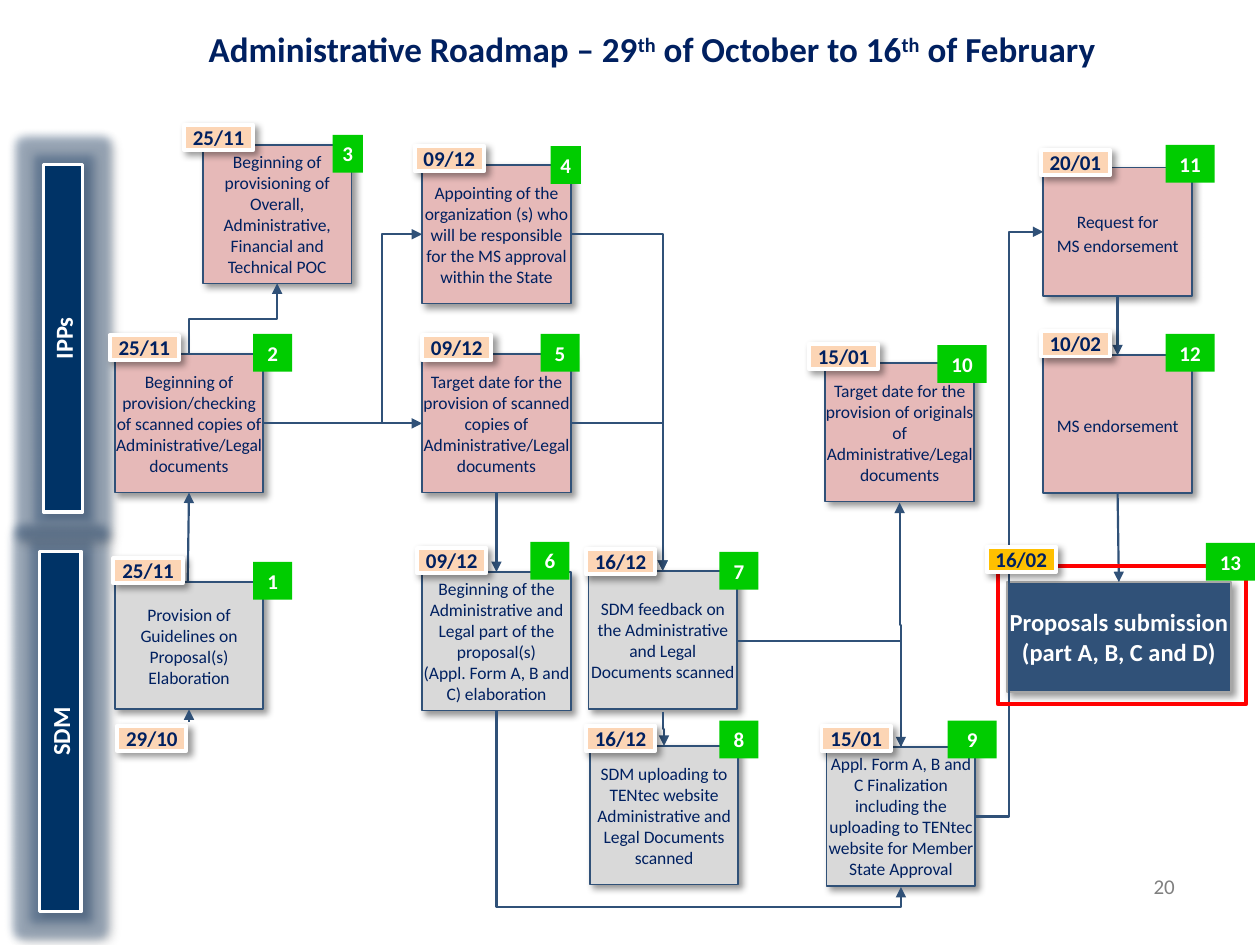
from lxml.etree import SubElement
from pptx import Presentation
from pptx.dml.color import RGBColor
from pptx.enum.shapes import MSO_CONNECTOR, MSO_SHAPE
from pptx.enum.text import MSO_ANCHOR, PP_ALIGN
from pptx.oxml.ns import qn
from pptx.util import Inches, Pt

TITLE = ["Administrative Roadmap – 29", "th", " of October to 16", "th", " of February"]
NAVY, BLUE, WHITE = "002060", "305178", "FFFFFF"
PINK, GREY, PEACH, GOLD, GREEN = "E6B9B8", "D9D9D9", "FCD5B5", "FFC000", "00CC00"
WIDE, TALL = 1.18, 1.1

# Swim lane: name, left, top, width, height before the quarter turn
LANES = [("SDM", -0.95, 5.64, 2.86, 0.33), ("IPPs", -0.88, 2.53, 2.76, 0.31)]

# Step: text, fill, left, top, height
STEPS = [
    ("Provision of Guidelines on Proposal(s) Elaboration", GREY, 0.91, 4.62, 1.01),
    ("Beginning of provision/checking of scanned copies of Administrative/Legal documents",
     PINK, 0.91, 2.81, TALL),
    ("Beginning of provisioning of Overall, Administrative, Financial and Technical POC",
     PINK, 1.61, 1.15, TALL),
    ("Appointing of the organization (s) who will be responsible for the MS approval "
     "within the State", PINK, 3.35, 1.31, TALL),
    ("Target date for the provision of scanned copies of Administrative/Legal documents",
     PINK, 3.35, 2.81, TALL),
    ("Beginning of the Administrative and Legal part of the proposal(s)\n"
     "(Appl. Form A, B and C) elaboration", GREY, 3.35, 4.54, TALL),
    ("SDM feedback on the Administrative and Legal Documents scanned",
     GREY, 4.67, 4.53, TALL),
    ("SDM uploading to TENtec website Administrative and Legal Documents scanned",
     GREY, 4.68, 5.92, TALL),
    ("Appl. Form A, B and C Finalization including the uploading to TENtec website "
     "for Member State Approval", GREY, 6.56, 5.93, TALL),
    ("Target date for the provision of originals of Administrative/Legal documents",
     PINK, 6.55, 2.88, TALL),
    ("Request for\vMS endorsement", PINK, 8.28, 1.33, 1.02),
    ("MS endorsement", PINK, 8.28, 2.82, 1.09),
]
GOAL = "Proposals submission (part A, B, C and D)"

# Date tag: text, left, top
DATES = [
    ("29/10", 0.93, 5.76), ("25/11", 0.9, 4.43), ("25/11", 0.87, 2.66),
    ("25/11", 1.46, 0.99), ("09/12", 3.29, 1.16), ("09/12", 3.35, 2.66),
    ("09/12", 3.31, 4.35), ("16/12", 4.65, 4.36), ("16/12", 4.65, 5.76),
    ("15/01", 6.52, 5.76), ("15/01", 6.42, 2.73), ("20/01", 8.26, 1.19),
    ("10/02", 8.26, 2.63), ("16/02", 7.83, 4.34),
]

# Number badges in step order: left, top, width
BADGES = [
    (2.01, 4.46, 0.31), (2.01, 2.65, 0.31), (2.64, 1.07, 0.24), (4.37, 1.16, 0.24),
    (4.29, 2.65, 0.31), (4.21, 4.3, 0.31), (5.71, 4.38, 0.31), (5.71, 5.72, 0.31),
    (7.52, 5.72, 0.39), (7.44, 2.74, 0.39), (9.25, 1.15, 0.39), (9.25, 2.65, 0.39),
    (9.57, 4.31, 0.39),
]

# Straight arrows: x and y of the start, then of the end
ARROWS = [
    (1.49, 4.62, 1.5, 3.91), (1.5, 5.73, 1.5, 5.63), (2.09, 3.36, 3.35, 3.36),
    (3.94, 3.91, 3.94, 4.54), (8.87, 2.35, 8.87, 2.82), (8.87, 3.91, 8.88, 4.62),
]

# Bent arrows: start and end, number of bends, starts upright, place of the middle leg
BENDS = [
    ((4.53, 3.36, 5.26, 4.53), 1, False, None),
    ((4.53, 1.86, 5.26, 4.53), 1, False, None),
    ((5.86, 5.09, 7.15, 5.93), 1, False, None),
    ((3.03, 3.36, 3.35, 1.86), 1, True, None),
    ((3.94, 5.64, 7.15, 7.04), 2, True, 1.115),
    ((7.74, 6.48, 8.28, 1.84), 2, False, 0.5),
    ((5.26, 5.65, 5.27, 5.92), 2, True, 0.5),
    ((7.15, 5.93, 7.14, 3.99), 2, True, 0.5),
    ((1.5, 2.81, 2.2, 2.25), 2, True, 0.5),
]


def paint(color, hue):
    color.rgb = RGBColor.from_string(hue)


def write(shape, text, size=10, hue=NAVY, bold=False, inset=(0, 0), lead=None,
          anchor=MSO_ANCHOR.MIDDLE, wrap=True):
    frame = shape.text_frame
    frame.word_wrap, frame.vertical_anchor = wrap, anchor
    frame.margin_left = frame.margin_right = Inches(inset[0])
    frame.margin_top = frame.margin_bottom = Inches(inset[1])
    frame.text = text
    for para in frame.paragraphs:
        para.alignment = PP_ALIGN.CENTER
        if lead:
            para.line_spacing = Pt(lead)
        for run in para.runs:
            font = run.font
            font.name, font.size, font.bold = "Calibri", Pt(size), bold
            paint(font.color, hue)


def effect(shape, tag, hue, alpha, **attrs):
    node = SubElement(shape._element.spPr.find(qn("a:effectLst")), qn(tag),
                      {key: str(val) for key, val in attrs.items()})
    color = SubElement(node, qn("a:srgbClr"), val=hue)
    SubElement(color, qn("a:alpha"), val=str(alpha * 1000))


def box(x, y, w, h, fill=None, line=None, width=1, shade=True, glow=False):
    shape = slide.shapes.add_shape(MSO_SHAPE.RECTANGLE, *map(Inches, (x, y, w, h)))
    shape.shadow.inherit = False
    if fill:
        shape.fill.solid()
        paint(shape.fill.fore_color, fill)
    else:
        shape.fill.background()
    if line:
        paint(shape.line.color, line)
        shape.line.width = Pt(width)
    else:
        shape.line.fill.background()
    if glow:
        effect(shape, "a:glow", BLUE, 40, rad=Pt(10))
    if shade:
        effect(shape, "a:outerShdw", "000000", 40, blurRad=Pt(4), dist=Pt(3),
               dir=45 * 60000, algn="tl", rotWithShape=0)
    return shape


def arrow(ends, kind=MSO_CONNECTOR.STRAIGHT):
    link = slide.shapes.add_connector(kind, *map(Inches, ends))
    paint(link.line.color, BLUE)
    link.line.width = Pt(1.25)
    SubElement(link.line._get_or_add_ln(), qn("a:tailEnd"), type="triangle")
    SubElement(link._element.spPr, qn("a:effectLst"))
    return link


def bend(ends, turns, upright, middle):
    """Draw an elbow arrow; an upright start is a level one turned by 90 degrees."""
    if upright:
        x1, y1, x2, y2 = ends
        cx, cy = (x1 + x2) / 2, (y1 + y2) / 2
        dx, dy = (y2 - y1) / 2, (x1 - x2) / 2
        ends = cx - dx, cy - dy, cx + dx, cy + dy
    props = arrow(ends, MSO_CONNECTOR.ELBOW)._element.spPr
    if upright:
        props.find(qn("a:xfrm")).set("rot", str(90 * 60000))
    geom = props.find(qn("a:prstGeom"))
    geom.set("prst", f"bentConnector{turns + 1}")
    if middle:
        SubElement(geom.find(qn("a:avLst")), qn("a:gd"), name="adj1",
                   fmla=f"val {round(middle * 100000)}")


deck = Presentation()
deck.slide_width, deck.slide_height = Inches(10), Inches(7.5)
slide = deck.slides.add_slide(deck.slide_layouts[5])

title = slide.shapes.title
title.left, title.top, title.width, title.height = map(Inches, (0.35, 0.17, 9.65, 0.67))
write(title, "", anchor=MSO_ANCHOR.TOP, inset=(0.1, 0.05))
for part in TITLE:
    run = title.text_frame.paragraphs[0].add_run()
    run.text = part
    run.font.name, run.font.size, run.font.bold = "Calibri", Pt(20), True
    paint(run.font.color, NAVY)
    if part == "th":
        run.font._element.set("baseline", "30000")

for name, *place in LANES:
    lane = box(*place, "003366", WHITE, 2, glow=True)
    lane.rotation = 270
    write(lane, name, size=14, hue=WHITE, bold=True, inset=(0.04, 0.05))

for text, fill, x, y, h in STEPS:
    write(box(x, y, WIDE, h, fill, BLUE), text,
          lead=14 if "MS endorsement" in text else None)
write(box(7.99, 4.62, 1.78, 0.87, BLUE, "A6A6A6"), GOAL, size=14, hue=WHITE, bold=True)

for ends in ARROWS:
    arrow(ends)
for item in BENDS:
    bend(*item)

box(7.92, 4.49, 1.97, 1.1, line="FF0000", width=2.25, shade=False)
for date, x, y in DATES:
    fill = GOLD if date == "16/02" else PEACH
    write(box(x, y, 0.55, 0.2, fill, WHITE, 2.25), date, size=12, bold=True, lead=14)
for num, (x, y, w) in enumerate(BADGES, 1):
    write(box(x, y, w, 0.3, GREEN, shade=False), str(num), size=12, hue=WHITE,
          bold=True, inset=(0.1, 0.05), anchor=MSO_ANCHOR.TOP, wrap=False)

page = slide.shapes.add_textbox(*map(Inches, (8.95, 6.95, 0.58, 0.17)))
write(page, "20", size=12, hue="808080", inset=(0.1, 0.05))

deck.save("out.pptx")
